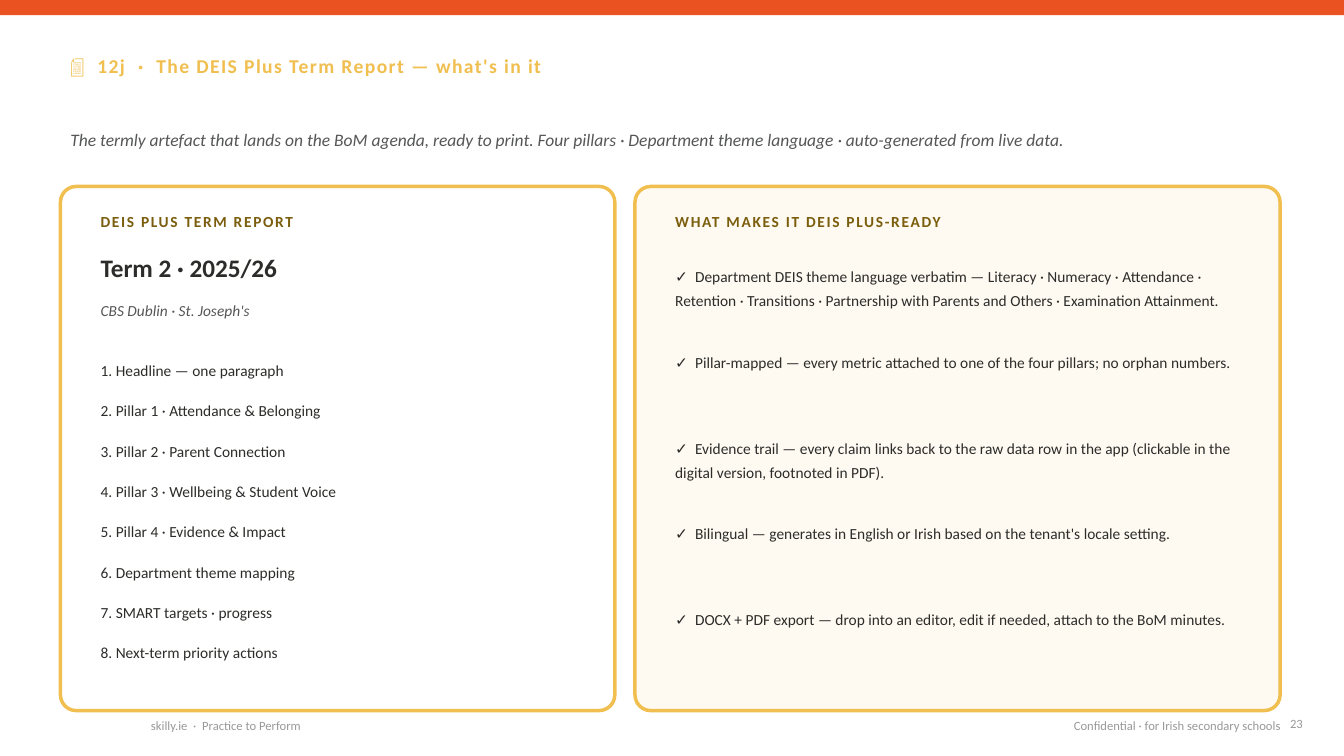
from pptx import Presentation
from pptx.dml.color import RGBColor
from pptx.enum import shapes, text
from pptx.util import Pt

COLORS = {
    "orange": "EA5321", "gold": "F0BF50", "brown": "7A5E0D", "ink": "2C2C2A",
    "slate": "555656", "grey": "999999", "white": "FFFFFF", "cream": "FEFAF1",
}
TITLE = "📄  12j  ·  The DEIS Plus Term Report — what's in it"
SUBTITLE = ("The termly artefact that lands on the BoM agenda, ready to print. "
            "Four pillars · Department theme language · auto-generated from live data.")
REPORT_HEADING = "DEIS PLUS TERM REPORT"
TERM = "Term 2 · 2025/26"
SCHOOL = "CBS Dublin · St. Joseph's"
SECTIONS = [
    "Headline — one paragraph",
    "Pillar 1 · Attendance & Belonging",
    "Pillar 2 · Parent Connection",
    "Pillar 3 · Wellbeing & Student Voice",
    "Pillar 4 · Evidence & Impact",
    "Department theme mapping",
    "SMART targets · progress",
    "Next-term priority actions",
]
READY_HEADING = "WHAT MAKES IT DEIS PLUS-READY"
CHECKS = [
    "Department DEIS theme language verbatim — Literacy · Numeracy · Attendance · "
    "Retention · Transitions · Partnership with Parents and Others · Examination Attainment.",
    "Pillar-mapped — every metric attached to one of the four pillars; no orphan numbers.",
    "Evidence trail — every claim links back to the raw data row in the app "
    "(clickable in the digital version, footnoted in PDF).",
    "Bilingual — generates in English or Irish based on the tenant's locale setting.",
    "DOCX + PDF export — drop into an editor, edit if needed, attach to the BoM minutes.",
]
FOOTER_LEFT = "skilly.ie  ·  Practice to Perform"
FOOTER_RIGHT = "Confidential · for Irish secondary schools"
PAGE = "23"

PANEL_TOP, PANEL_H = 133.2, 374.4
REPORT_X, REPORT_W = 43.2, 396
READY_X, READY_W = 453.6, 460.8
PAD = 21.6
FOOTER_Y, FOOTER_H = 507.6, 21.6
SECTION_TOP, SECTION_STEP = 252, 28.8
CHECK_TOP, CHECK_STEP = 183.6, 61.2


def rgb(name):
    return RGBColor.from_string(COLORS[name])


def add_box(slide, kind, x, y, w, h, fill):
    sp = slide.shapes.add_shape(kind, Pt(x), Pt(y), Pt(w), Pt(h))
    sp.shadow.inherit = False
    sp.fill.solid()
    sp.fill.fore_color.rgb = rgb(fill)
    sp.line.fill.background()
    return sp


def add_panel(slide, x, w, fill):
    sp = add_box(slide, shapes.MSO_SHAPE.ROUNDED_RECTANGLE, x, PANEL_TOP, w, PANEL_H, fill)
    sp.adjustments[0] = 0.03
    sp.line.color.rgb = rgb("gold")
    sp.line.width = Pt(2.5)


def add_text(slide, words, x, y, w, h, size, color, bold=False, italic=False,
             tracking=0, spacing=None, middle=True, right=False):
    tf = slide.shapes.add_textbox(Pt(x), Pt(y), Pt(w), Pt(h)).text_frame
    tf.word_wrap = True
    tf.vertical_anchor = text.MSO_ANCHOR.MIDDLE if middle else text.MSO_ANCHOR.TOP
    p = tf.paragraphs[0]
    r = p.add_run()
    r.text = words
    if tracking:
        r._r.get_or_add_rPr().set("spc", str(round(tracking * 100)))
    if spacing:
        p.line_spacing = spacing
    if right:
        p.alignment = text.PP_ALIGN.RIGHT
    p.font.name = "Calibri"
    p.font.size = Pt(size)
    p.font.bold = bold
    p.font.italic = italic
    p.font.color.rgb = rgb(color)


def add_heading(slide, words, x, w):
    add_text(slide, words, x, 144, w, 28.8, 11, "brown", bold=True, tracking=1.2)


def main():
    prs = Presentation()
    prs.slide_width, prs.slide_height = Pt(960), Pt(540)
    s = prs.slides.add_slide(prs.slide_layouts[6])

    add_box(s, shapes.MSO_SHAPE.RECTANGLE, 0, 0, 960, 10.8, "orange")
    add_text(s, FOOTER_LEFT, 100.8, FOOTER_Y, 504, FOOTER_H, 9, "grey")
    add_text(s, FOOTER_RIGHT, 604.8, FOOTER_Y, 316.8, FOOTER_H, 9, "grey", right=True)
    add_text(s, TITLE, 43.2, 28.8, 864, 36, 14, "gold", bold=True, tracking=1)
    add_text(s, SUBTITLE, 43.2, 75.6, 871.2, 43.2, 12.5, "slate", italic=True, spacing=1.3)

    add_panel(s, REPORT_X, REPORT_W, "white")
    x, w = REPORT_X + PAD, REPORT_W - 2 * PAD
    add_heading(s, REPORT_HEADING, x, w)
    add_text(s, TERM, x, 172.8, w, 36, 18, "ink", bold=True)
    add_text(s, SCHOOL, x, 208.8, w, 25.2, 11, "slate", italic=True)
    for i, section in enumerate(SECTIONS):
        add_text(s, f"{i + 1}. {section}", x, SECTION_TOP + i * SECTION_STEP, w, 25.2, 11, "ink")

    add_panel(s, READY_X, READY_W, "cream")
    x, w = READY_X + PAD, 424.8
    add_heading(s, READY_HEADING, x, w)
    for i, check in enumerate(CHECKS):
        add_text(s, f"✓  {check}", x, CHECK_TOP + i * CHECK_STEP, w, 57.6, 11, "ink",
                 spacing=1.3, middle=False)

    add_text(s, PAGE, 914.4, FOOTER_Y, 36, FOOTER_H, 9, "grey", middle=False)
    prs.save("out.pptx")


if __name__ == "__main__":
    main()
